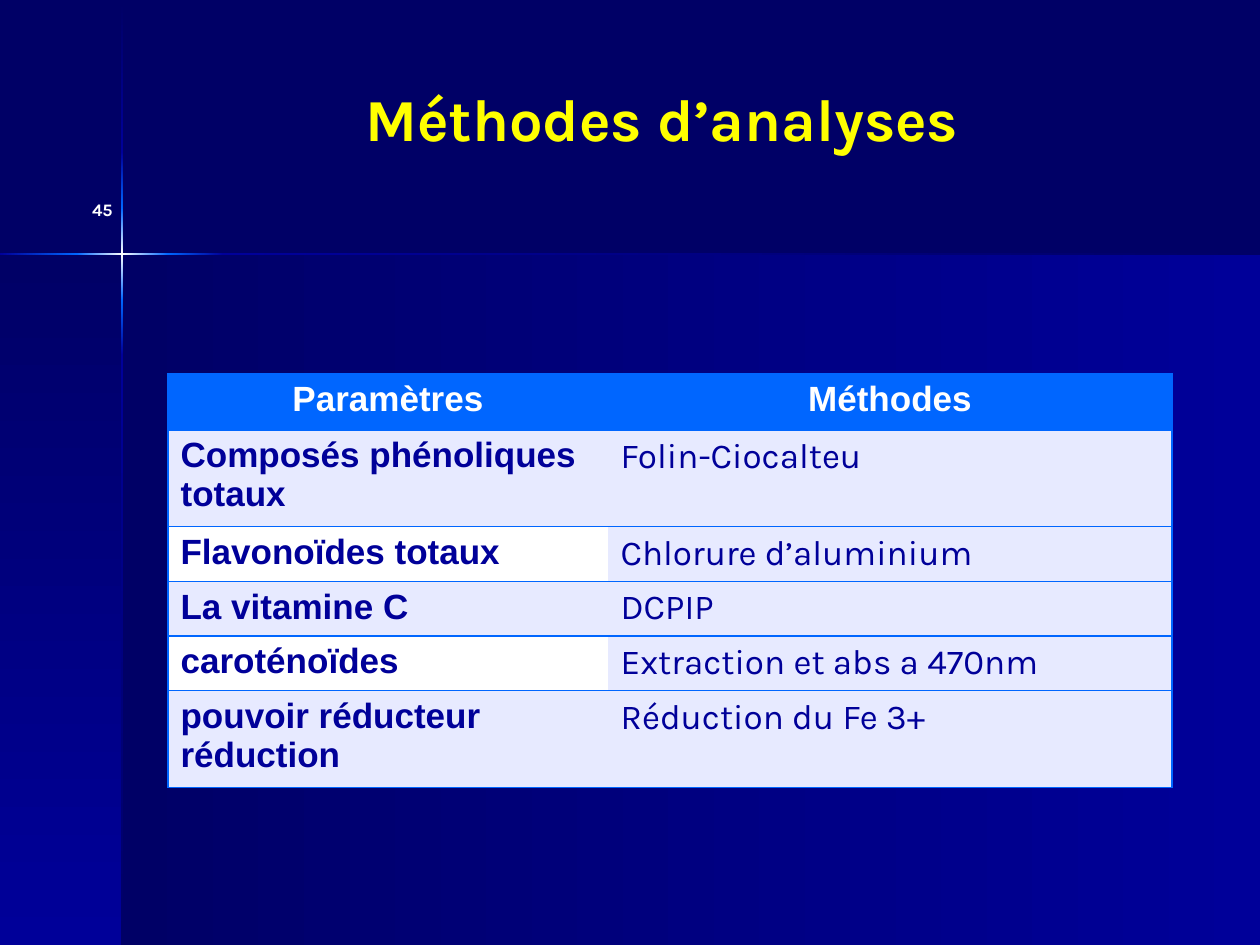
"""Build the slide on analysis methods: a glowing cross backdrop, a title and a table."""
import copy

import lxml.etree
import pptx
import pptx.dml.color
import pptx.enum.shapes
import pptx.enum.text
import pptx.oxml.ns
import pptx.util

SCALE = 7257


class Theme:
    night, navy, bright = "000066", "000099", "0066FF"
    white, pale, yellow = "FFFFFF", "E7EAFF", "FFFF00"
    plain_font, brand_font = "Arial", "Karla"
    title_size, table_size, number_size = 34, 20, 10


def write(frame, text, size, color, font=Theme.brand_font, bold=False, align="LEFT", anchor="TOP"):
    frame.word_wrap = True
    frame.vertical_anchor = pptx.enum.text.MSO_ANCHOR[anchor]
    para = frame.paragraphs[0]
    para.alignment = pptx.enum.text.PP_ALIGN[align]
    span = para.add_run()
    span.text = text
    span.font.name = font
    span.font.size = pptx.util.Pt(size)
    span.font.bold = bold
    span.font.color.rgb = pptx.dml.color.RGBColor.from_string(color)


def add_gradient(page, bounds, colors, angle):
    panel = page.shapes.add_shape(
        pptx.enum.shapes.MSO_SHAPE.RECTANGLE, *[value * SCALE for value in bounds])
    panel.shadow.inherit = False
    panel.line.fill.background()
    panel.fill.gradient()
    panel.fill.gradient_angle = -angle % 360
    first_stop = panel._element.spPr.find(".//" + pptx.oxml.ns.qn("a:gs"))
    for _ in colors[2:]:
        first_stop.addnext(copy.deepcopy(first_stop))
    for index, (stop, color) in enumerate(zip(panel.fill.gradient_stops, colors)):
        stop.color.rgb = pptx.dml.color.RGBColor.from_string(color)
        stop.position = index / (len(colors) - 1)


deck = pptx.Presentation()
deck.slide_width, deck.slide_height = 1260 * SCALE, 945 * SCALE
page = deck.slides.add_slide(deck.slide_layouts[6])
page.background.fill.solid()
page.background.fill.fore_color.rgb = pptx.dml.color.RGBColor.from_string(Theme.night)

add_gradient(page, (122, 255, 1138, 690), (Theme.night, Theme.navy), 0)
add_gradient(page, (0, 255, 122, 690), (Theme.night, Theme.navy), 90)

glow = [
    (Theme.night, Theme.navy),
    (Theme.navy, Theme.bright),
    (Theme.bright, Theme.white, Theme.bright),
    (Theme.bright, Theme.navy),
    (Theme.navy, Theme.night),
]
vertical_edges = [1, 152, 208, 300, 355, 945]
horizontal_edges = [0, 77, 168, 223, 1260]
for start, end, colors in zip(vertical_edges, vertical_edges[1:], glow):
    add_gradient(page, (121, start, 2, end - start), colors, 90)
for start, end, colors in zip(horizontal_edges, horizontal_edges[1:], glow[1:]):
    add_gradient(page, (start, 253, end - start, 2), colors, 0)

title_box = page.shapes.add_textbox(353 * SCALE, 39 * SCALE, 760 * SCALE, 158 * SCALE)
write(title_box.text_frame, "Méthodes d’analyses", Theme.title_size, Theme.yellow,
      bold=True, anchor="MIDDLE")

rows = [
    ("Paramètres", "Méthodes"),
    ("Composés phénoliques totaux", "Folin-Ciocalteu"),
    ("Flavonoïdes totaux", "Chlorure d’aluminium"),
    ("La vitamine C", "DCPIP"),
    ("caroténoïdes", "Extraction et abs a 470nm"),
    ("pouvoir réducteur réduction", "Réduction du Fe 3+"),
]
row_heights = [56, 90, 54, 54, 54, 90]
column_widths = [440, 564]
table = page.shapes.add_table(
    len(rows), len(column_widths), 168 * SCALE, 374 * SCALE,
    sum(column_widths) * SCALE, sum(row_heights) * SCALE).table
table.horz_banding = False
for column, width in zip(table.columns, column_widths):
    column.width = width * SCALE

for row_index, (row, height, texts) in enumerate(zip(table.rows, row_heights, rows)):
    row.height = height * SCALE
    for column_index, (cell, text) in enumerate(zip(row.cells, texts)):
        is_header, is_label = row_index == 0, column_index == 0
        outer_side = "lnL" if is_label else "lnR"
        properties = cell._tc.get_or_add_tcPr()
        for side in ("lnL", "lnR", "lnT", "lnB"):
            border = lxml.etree.SubElement(properties, pptx.oxml.ns.qn(f"a:{side}"), w="12700")
            if side in (outer_side, "lnT", "lnB"):
                paint = lxml.etree.SubElement(border, pptx.oxml.ns.qn("a:solidFill"))
                lxml.etree.SubElement(paint, pptx.oxml.ns.qn("a:srgbClr"), val=Theme.bright)
            else:
                lxml.etree.SubElement(border, pptx.oxml.ns.qn("a:noFill"))
        if is_header:
            fill_color = Theme.bright
        elif is_label and row_index % 2 == 0:
            fill_color = Theme.white
        else:
            fill_color = Theme.pale
        cell.fill.solid()
        cell.fill.fore_color.rgb = pptx.dml.color.RGBColor.from_string(fill_color)
        strong = is_header or is_label
        write(cell.text_frame, text, Theme.table_size,
              Theme.white if is_header else Theme.navy,
              font=Theme.plain_font if strong else Theme.brand_font,
              bold=strong, align="CENTER" if is_header else "LEFT")

number_box = page.shapes.add_textbox(-137 * SCALE, 186 * SCALE, 262 * SCALE, 63 * SCALE)
number_box.text_frame.margin_top = 13 * SCALE
write(number_box.text_frame, "45", Theme.number_size, Theme.white, bold=True, align="RIGHT")

deck.save("out.pptx")
